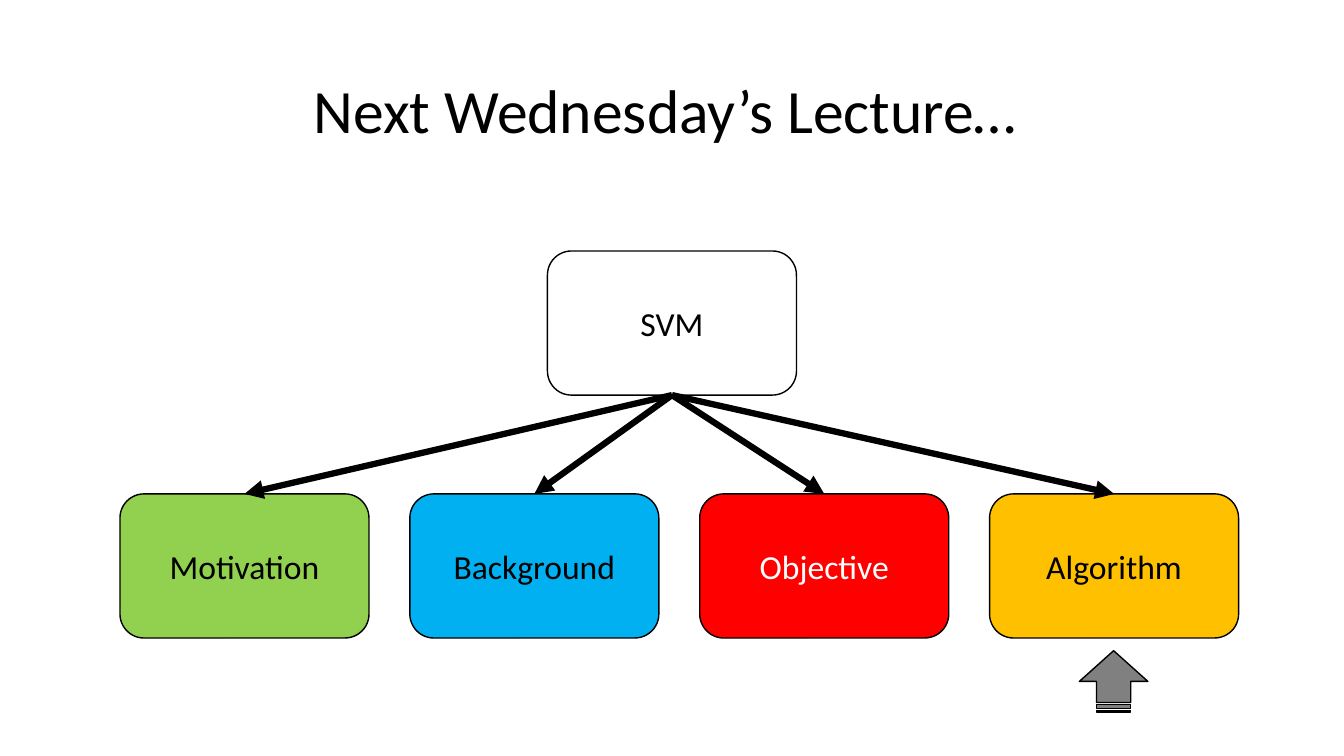
from lxml import etree
from pptx import Presentation
from pptx.dml.color import RGBColor
from pptx.enum.shapes import MSO_CONNECTOR, MSO_SHAPE
from pptx.enum.text import MSO_ANCHOR, PP_ALIGN
from pptx.oxml.ns import qn
from pptx.util import Inches, Pt

ROUND = MSO_SHAPE.ROUNDED_RECTANGLE
STRIPED = MSO_SHAPE.STRIPED_RIGHT_ARROW
STRAIGHT = MSO_CONNECTOR.STRAIGHT
MIDDLE = MSO_ANCHOR.MIDDLE
CENTER = PP_ALIGN.CENTER
BOTTOM, TOP = 2, 0
BOX_W, BOX_H = 2.47, 1.43

TOPICS = [
    ("Motivation", "92D050", "000000"),
    ("Background", "00B0F0", "000000"),
    ("Objective", "FF0000", "FFFFFF"),
    ("Algorithm", "FFC000", "000000"),
]


def write(shape, text, size, color):
    """Put one centred line of text into a shape."""
    frame = shape.text_frame
    frame.word_wrap = True
    frame.vertical_anchor = MIDDLE
    para = frame.paragraphs[0]
    para.alignment = CENTER
    run = para.add_run()
    run.text = text
    run.font.name = "Calibri"
    run.font.size = Pt(size)
    run.font.color.rgb = RGBColor.from_string(color)
    return para


def add_block(kind, left, top, width, height, fill):
    """Add a filled shape with a thin black outline."""
    block = slide.shapes.add_shape(
        kind, Inches(left), Inches(top), Inches(width), Inches(height))
    block.shadow.inherit = False
    block.fill.solid()
    block.fill.fore_color.rgb = RGBColor.from_string(fill)
    block.line.color.rgb = RGBColor.from_string("000000")
    block.line.width = Pt(1)
    return block


deck = Presentation()
deck.slide_width = Inches(13.33)
deck.slide_height = Inches(7.5)
slide = deck.slides.add_slide(deck.slide_layouts[6])

# Title
title = slide.shapes.add_textbox(
    Inches(0.92), Inches(0.4), Inches(11.5), Inches(1.45))
write(title, "Next Wednesday’s Lecture… ", 44, "000000").line_spacing = 0.9

# Root and its four topics
root = add_block(ROUND, 5.43, 2.49, BOX_W, BOX_H, "FFFFFF")
write(root, "SVM", 24, "000000")

for i, (name, fill, color) in enumerate(TOPICS):
    topic = add_block(ROUND, 1.19 + i * 2.875, 4.9, BOX_W, BOX_H, fill)
    write(topic, name, 24, color)
    link = slide.shapes.add_connector(STRAIGHT, 0, 0, 0, 0)
    link.begin_connect(root, BOTTOM)
    link.end_connect(topic, TOP)
    link.line.color.rgb = RGBColor.from_string("000000")
    link.line.width = Pt(4.5)
    etree.SubElement(link.line._get_or_add_ln(), qn("a:tailEnd"), type="triangle")
    etree.SubElement(link._element.spPr, qn("a:effectLst"))

# Pointer to the current topic
pointer = add_block(STRIPED, 10.74, 6.42, 0.61, 0.68, "808080")
pointer.rotation = 270

deck.save("out.pptx")
